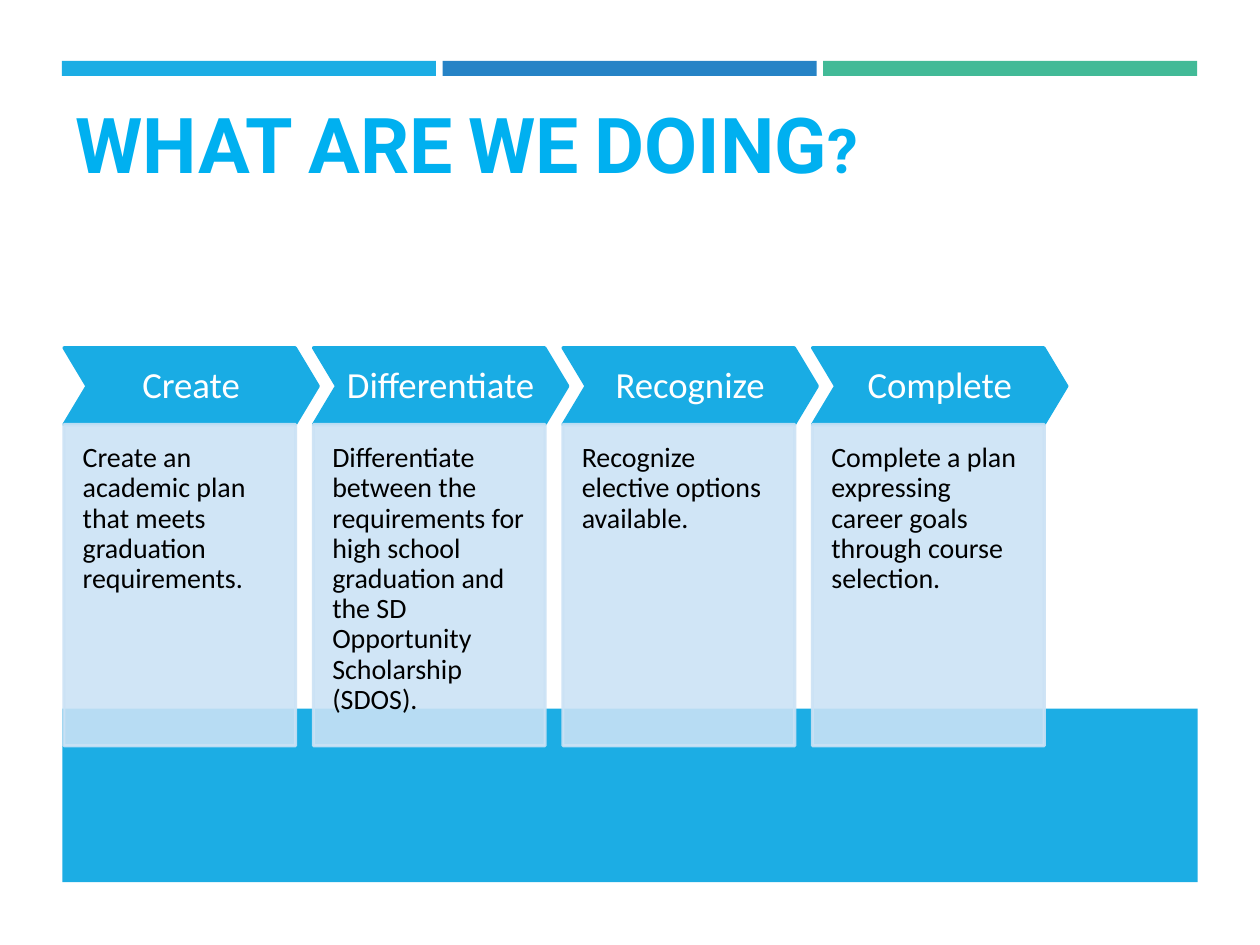
"""Build the "What are we doing?" slide with its four-step chevron process."""
from dataclasses import dataclass

from lxml import etree
from pptx import Presentation
from pptx.dml.color import RGBColor
from pptx.enum.shapes import MSO_SHAPE
from pptx.enum.text import MSO_ANCHOR, MSO_AUTO_SIZE, PP_ALIGN
from pptx.oxml.ns import qn
from pptx.shapes.autoshape import Shape
from pptx.slide import Slide
from pptx.util import Pt

RECT, CHEVRON = MSO_SHAPE.RECTANGLE, MSO_SHAPE.CHEVRON
TOP, MIDDLE, BOTTOM = MSO_ANCHOR.TOP, MSO_ANCHOR.MIDDLE, MSO_ANCHOR.BOTTOM
LEFT, CENTER = PP_ALIGN.LEFT, PP_ALIGN.CENTER
NO_AUTOFIT = MSO_AUTO_SIZE.NONE
TITLE_ONLY = 5


@dataclass(frozen=True)
class Theme:
    """Colours, fonts and type sizes of the slide."""
    bars: tuple[str, ...] = ("1CADE4", "2683C6", "42BA97")
    band: str = "1CADE4"
    title: str = "00B0F0"
    chevron: str = "19ACE4"
    panel: str = "CBE2F5"
    panel_alpha: int = 89
    heading: str = "FFFFFF"
    body: str = "000000"
    title_font: str = "Roboto"
    text_font: str = "Calibri"
    title_size: float = 44
    heading_size: float = 21
    body_size: float = 16
    outline: float = 1.75


@dataclass(frozen=True)
class Box:
    """A rectangle in points."""
    left: float
    top: float
    width: float
    height: float


@dataclass(frozen=True)
class Step:
    """A process step."""
    heading: str
    body: str


THEME = Theme()
STEPS = (
    Step("Create", "Create an academic plan that meets graduation requirements."),
    Step("Differentiate", "Differentiate between the requirements for high school "
         "graduation and the SD Opportunity Scholarship (SDOS)."),
    Step("Recognize", "Recognize elective options available."),
    Step("Complete", "Complete a plan expressing career goals through course selection."),
)
BAR = Box(35.4, 34.8, 213.7, 8.6)
BAR_PITCH = 217.5
BAND = Box(35.7, 404.9, 648.7, 99.2)
TITLE = Box(36, 21.6, 648, 90)
STEP_LEFT, STEP_TOP, STEP_PITCH = 36.5, 198.7, 142.6
CHEVRON_WIDTH, CHEVRON_HEIGHT = 145.4, 43.9
PANEL_WIDTH, PANEL_HEIGHT = 132.5, 183.6


def add_block(s: Slide, kind: MSO_SHAPE, box: Box, color: str, outline: float = 0) -> Shape:
    """Add a filled shape, outlined in its own colour if a width is given."""
    sp = s.shapes.add_shape(kind, Pt(box.left), Pt(box.top), Pt(box.width), Pt(box.height))
    sp.shadow.inherit = False
    sp.fill.solid()
    sp.fill.fore_color.rgb = RGBColor.from_string(color)
    if outline:
        sp.line.color.rgb = RGBColor.from_string(color)
        sp.line.width = Pt(outline)
    else:
        sp.line.fill.background()
    return sp


def set_alpha(sp: Shape, percent: int) -> None:
    """Make the fill and outline of a shape partly transparent."""
    for color in sp._element.spPr.iter(qn("a:srgbClr")):
        etree.SubElement(color, qn("a:alpha"), val=str(percent * 1000))


def set_text(sp: Shape, text: str, font: str, size: float, color: str, anchor: MSO_ANCHOR,
             align: PP_ALIGN, insets: tuple[float, float, float, float],
             spacing: float = 1.0, bold: bool = False) -> None:
    """Write one formatted paragraph; insets are left, top, right, bottom."""
    tf = sp.text_frame
    tf.text = text
    tf.word_wrap = True
    tf.auto_size = NO_AUTOFIT
    tf.vertical_anchor = anchor
    tf.margin_left, tf.margin_top, tf.margin_right, tf.margin_bottom = map(Pt, insets)
    p = tf.paragraphs[0]
    p.alignment = align
    p.line_spacing = spacing
    p.font.name = font
    p.font.size = Pt(size)
    p.font.bold = bold
    p.font.color.rgb = RGBColor.from_string(color)


def add_title(s: Slide, text: str) -> None:
    """Place and format the title in small capitals."""
    sp = s.shapes.title
    sp.left, sp.top, sp.width, sp.height = map(
        Pt, (TITLE.left, TITLE.top, TITLE.width, TITLE.height))
    set_text(sp, text, THEME.title_font, THEME.title_size, THEME.title,
             BOTTOM, LEFT, (7.2, 3.6, 7.2, 3.6), bold=True)
    r = sp.text_frame.paragraphs[0].runs[0]
    r._r.get_or_add_rPr().set("cap", "small")


def add_step(s: Slide, step: Step, left: float) -> None:
    """Draw a chevron heading above its description panel."""
    chevron = add_block(s, CHEVRON, Box(left, STEP_TOP, CHEVRON_WIDTH, CHEVRON_HEIGHT),
                        THEME.chevron, THEME.outline)
    chevron.adjustments[0] = 0.3
    set_text(chevron, step.heading, THEME.text_font, THEME.heading_size, THEME.heading,
             MIDDLE, CENTER, (5, 5, 5, 5), spacing=0.9)
    panel = add_block(s, RECT, Box(left, STEP_TOP + CHEVRON_HEIGHT, PANEL_WIDTH, PANEL_HEIGHT),
                      THEME.panel, THEME.outline)
    set_alpha(panel, THEME.panel_alpha)
    set_text(panel, step.body, THEME.text_font, THEME.body_size, THEME.body,
             TOP, LEFT, (10.8, 10.8, 10.8, 21), spacing=0.9)


def main() -> None:
    """Build and save the slide."""
    prs = Presentation()
    prs.slide_width, prs.slide_height = Pt(720), Pt(540)
    s = prs.slides.add_slide(prs.slide_layouts[TITLE_ONLY])
    for i, color in enumerate(THEME.bars):
        add_block(s, RECT, Box(BAR.left + i * BAR_PITCH, BAR.top, BAR.width, BAR.height), color)
    add_block(s, RECT, BAND, THEME.band)
    add_title(s, "WHAT ARE WE DOING?")
    for i, step in enumerate(STEPS):
        add_step(s, step, STEP_LEFT + i * STEP_PITCH)
    prs.save("out.pptx")


if __name__ == "__main__":
    main()
